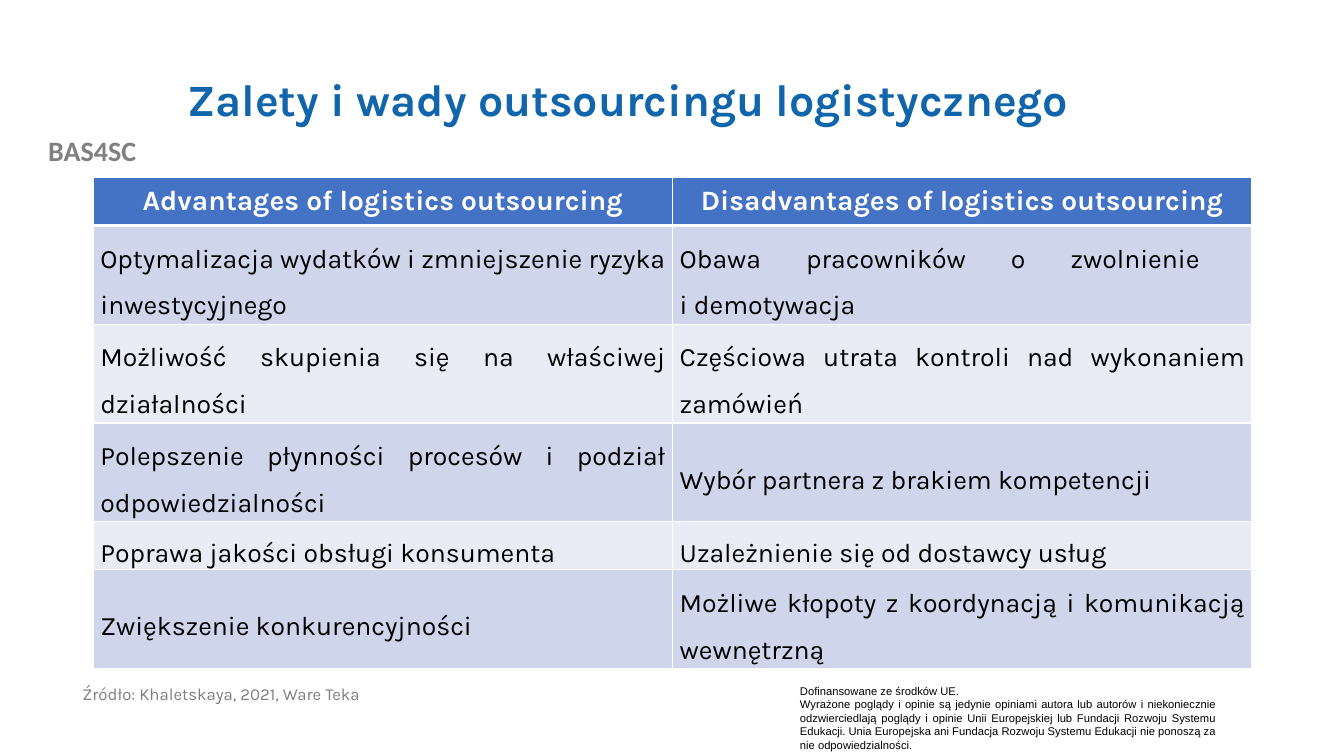
import pptx
import pptx.util
import pptx.dml.color
import pptx.enum.text
import pptx.oxml

Cm, Pt = pptx.util.Cm, pptx.util.Pt
Align = pptx.enum.text.PP_ALIGN
Anchor = pptx.enum.text.MSO_ANCHOR

TITLE = "Zalety i wady outsourcingu logistycznego"
PROJECT = "BAS4SC"
SOURCE = "Źródło: Khaletskaya, 2021, Ware Teka"
FUNDING = [
    "Dofinansowane ze środków UE.",
    "Wyrażone poglądy i opinie są jedynie opiniami autora lub autorów i niekoniecznie "
    "odzwierciedlają poglądy i opinie Unii Europejskiej lub Fundacji Rozwoju Systemu Edukacji. "
    "Unia Europejska ani Fundacja Rozwoju Systemu Edukacji nie ponoszą za nie odpowiedzialności",
]
ROWS = [
    ("Advantages of logistics outsourcing", "Disadvantages of logistics outsourcing"),
    ("Optymalizacja wydatków i zmniejszenie ryzyka inwestycyjnego",
     "Obawa pracowników o zwolnienie \vi demotywacja"),
    ("Możliwość skupienia się na właściwej działalności",
     "Częściowa utrata kontroli nad wykonaniem zamówień"),
    ("Polepszenie płynności procesów i podział odpowiedzialności",
     "Wybór partnera z brakiem kompetencji"),
    ("Poprawa jakości obsługi konsumenta", "Uzależnienie się od dostawcy usług"),
    ("Zwiększenie konkurencyjności",
     "Możliwe kłopoty z koordynacją i komunikacją wewnętrzną"),
]
SHORT, TALL = 1.2, 2.49
HEIGHTS = [SHORT, TALL, TALL, TALL, SHORT, TALL]
WIDTH = 14.6

THEME = {
    "title": ("Karla", 32, "1065AB", True),
    "project": ("Calibri", 20, "808080", True),
    "source": ("Karla", 12, "7F7F7F", False),
    "funding": ("Arial", 8, "000000", False),
    "stop": ("Arial", 7, "000000", False),
    "head": ("Karla", 20, "FFFFFF", True),
    "body": ("Karla", 19, "000000", False),
    "fills": ("4472C4", "CFD5EA", "E9EBF5"),
    "border": "FFFFFF",
}


def color(code):
    return pptx.dml.color.RGBColor.from_string(code)


def style(run, role):
    name, size, code, bold = THEME[role]
    font = run.font
    font.name, font.size, font.bold = name, Pt(size), bold
    font.color.rgb = color(code)


def add_text(slide, box, lines, role, align=Align.LEFT, spacing=None):
    frame = slide.shapes.add_textbox(*map(Cm, box)).text_frame
    frame.word_wrap = True
    frame.text = "\n".join(lines)
    for par in frame.paragraphs:
        par.alignment = align
        par.line_spacing = spacing
        for run in par.runs:
            style(run, role)
    return frame


def add_borders(cell, bottom):
    props = cell._tc.get_or_add_tcPr()
    for side, width in (("L", 1), ("R", 1), ("T", 1), ("B", bottom)):
        props.append(pptx.oxml.parse_xml(
            f'<a:ln{side} xmlns:a="http://schemas.openxmlformats.org/drawingml/2006/main" '
            f'w="{Pt(width)}"><a:solidFill><a:srgbClr val="{THEME["border"]}"/>'
            f'</a:solidFill></a:ln{side}>'))


def fill_cell(cell, text, row):
    head = row == 0
    add_borders(cell, 3 if head else 1)
    cell.fill.solid()
    cell.fill.fore_color.rgb = color(THEME["fills"][0 if head else 2 - row % 2])
    cell.vertical_anchor = Anchor.MIDDLE
    par = cell.text_frame.paragraphs[0]
    par.text = text
    par.alignment = Align.CENTER if head else Align.JUSTIFY
    if not head:
        cell.margin_left = cell.margin_right = Cm(0.18)
        cell.margin_top = cell.margin_bottom = 0
        par.line_spacing = 1.5
        par.space_after = Pt(6)
    for run in par.runs:
        style(run, "head" if head else "body")


def add_grid(slide):
    table = slide.shapes.add_table(
        len(ROWS), 2, Cm(2.35), Cm(4.48), Cm(2 * WIDTH), Cm(sum(HEIGHTS))).table
    for col in table.columns:
        col.width = Cm(WIDTH)
    for row, (texts, height) in enumerate(zip(ROWS, HEIGHTS)):
        table.rows[row].height = Cm(height)
        for col, text in enumerate(texts):
            fill_cell(table.cell(row, col), text, row)


def main():
    deck = pptx.Presentation()
    deck.slide_width, deck.slide_height = Cm(33.87), Cm(19.05)
    slide = deck.slides.add_slide(deck.slide_layouts[6])

    add_text(slide, (0, 3.25, 4.65, 1.12), [PROJECT], "project", Align.CENTER)
    funding = add_text(slide, (19.91, 17.12, 11, 1.96), FUNDING, "funding", Align.JUSTIFY)
    stop = funding.paragraphs[-1].add_run()
    stop.text = "."
    style(stop, "stop")
    title = add_text(slide, (4.47, 1.02, 27.08, 3.1), [TITLE], "title", spacing=0.9)
    title.vertical_anchor = Anchor.MIDDLE
    add_text(slide, (1.83, 17.17, 12.73, 1.32), [SOURCE], "source", spacing=0.9)
    add_grid(slide)
    deck.save("out.pptx")


if __name__ == "__main__":
    main()
